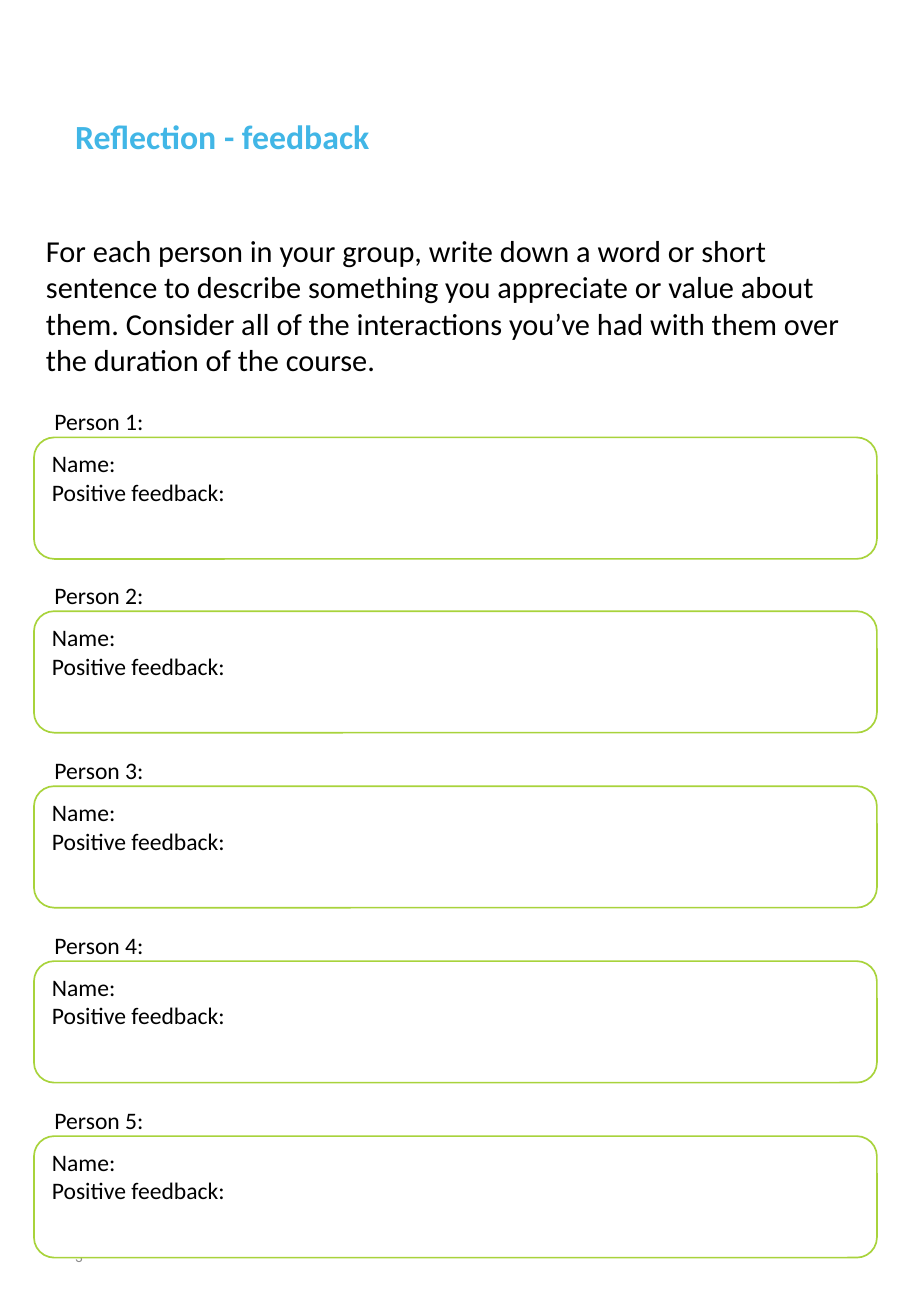
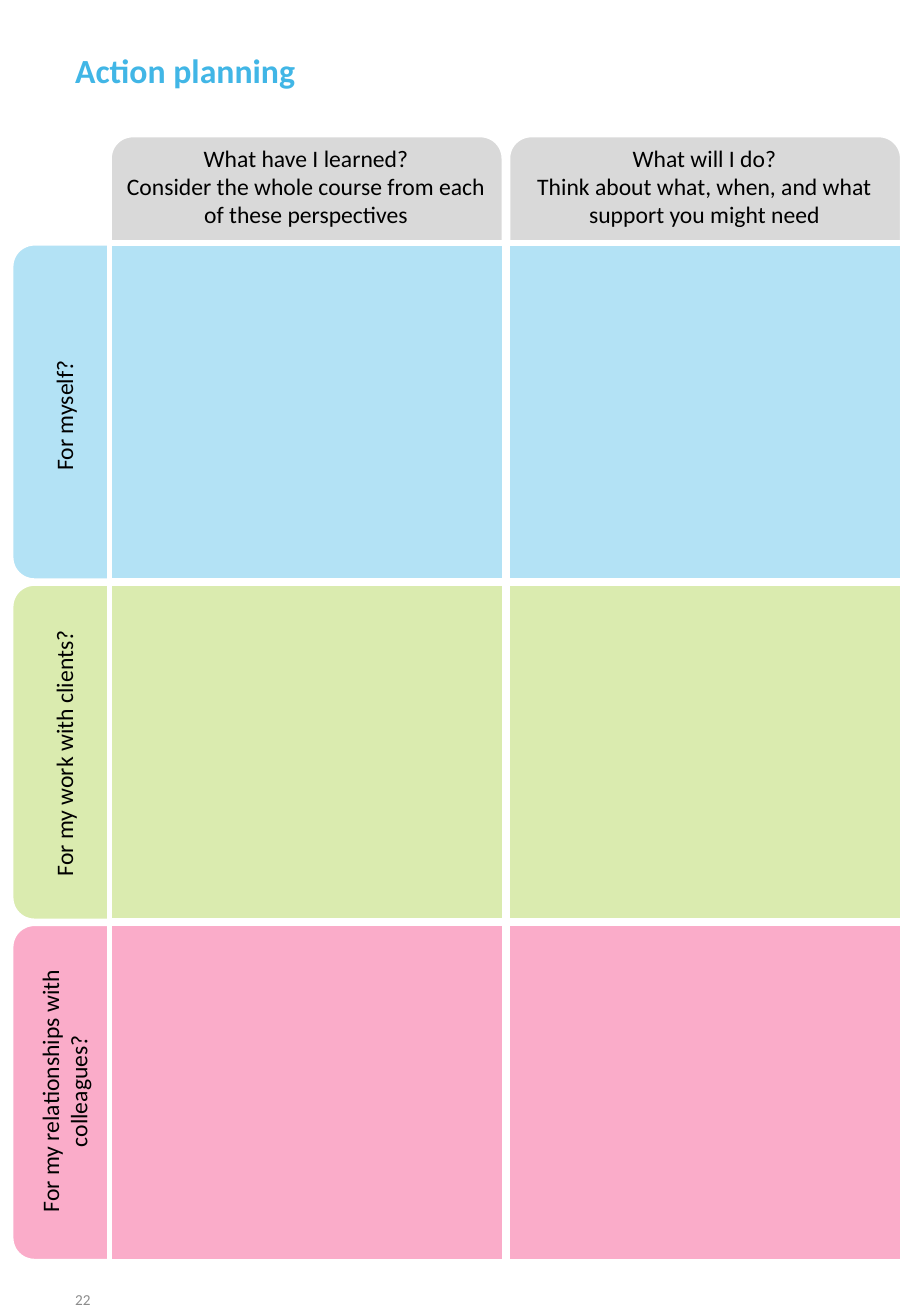
from pptx import Presentation
from pptx.dml.color import RGBColor
from pptx.enum.shapes import MSO_SHAPE as Shape
from pptx.enum.text import MSO_ANCHOR as Anchor, MSO_AUTO_SIZE as AutoSize, PP_ALIGN as Align
from pptx.util import Pt

PX = 9144
BLACK = RGBColor(0x00, 0x00, 0x00)
WHITE = RGBColor(0xFF, 0xFF, 0xFF)
TITLE_BLUE = RGBColor(0x41, 0xB6, 0xE6)
NUMBER_GREY = RGBColor(0x8C, 0x8C, 0x8C)
HEADER_GREY = RGBColor(0xD9, 0xD9, 0xD9)
GREEN_LINE = RGBColor(0xA8, 0xD3, 0x3B)
PALE_BLUE = RGBColor(0xB3, 0xE2, 0xF5)
PALE_GREEN = RGBColor(0xDA, 0xEB, 0xAF)
PINK = RGBColor(0xFA, 0xAC, 0xC9)

TITLE = {"font": {"size": Pt(20), "bold": True}, "color": TITLE_BLUE,
         "para": {"line_spacing": 0.9}, "frame": {"vertical_anchor": Anchor.MIDDLE}}
NUMBER = {"font": {"size": Pt(9)}, "color": NUMBER_GREY,
          "frame": {"vertical_anchor": Anchor.MIDDLE}}
INTRO = {"font": {"size": Pt(18)}, "frame": {"auto_size": AutoSize.SHAPE_TO_FIT_TEXT}}
FIELD = {"font": {"size": Pt(14)}, "para": {"alignment": Align.LEFT},
         "frame": {"vertical_anchor": Anchor.TOP}}
PERSON = {"font": {"size": Pt(14)},
          "frame": {"word_wrap": False, "auto_size": AutoSize.SHAPE_TO_FIT_TEXT}}
HEADING = {"font": {"size": Pt(14)}, "para": {"alignment": Align.CENTER},
           "frame": {"vertical_anchor": Anchor.MIDDLE}}


def write(page, at, lines, style, box=None):
    box = box or page.shapes.add_textbox(*[length * PX for length in at])
    frame = box.text_frame
    frame.word_wrap = True
    for name, value in style["frame"].items():
        setattr(frame, name, value)
    frame.text = "\n".join(lines)
    for para in frame.paragraphs:
        for name, value in style.get("para", {}).items():
            setattr(para, name, value)
        for span in para.runs:
            span.font.name = "Calibri"
            span.font.color.rgb = style.get("color", BLACK)
            for name, value in style["font"].items():
                setattr(span.font, name, value)
    return box


def draw(page, kind, at, fill, line, weight):
    box = page.shapes.add_shape(kind, *[length * PX for length in at])
    box.shadow.inherit = False
    box.fill.solid()
    box.fill.fore_color.rgb = fill
    box.line.color.rgb = line
    box.line.width = Pt(weight)
    return box


deck = Presentation()
deck.slide_width = 750 * PX
deck.slide_height = 1083 * PX

pages = []
for title, title_top, number, number_top in [
    ("Reflection - feedback", 85, "3", 1005),
    ("Action planning", 31, "22", 1040),
]:
    page = deck.slides.add_slide(deck.slide_layouts[6])
    write(page, (52, title_top, 647, 58), [title], TITLE)
    write(page, (52, number_top, 169, 58), [number], NUMBER)
    pages.append(page)
feedback, planning = pages

write(feedback, (28, 186, 694, 131), [
    "For each person in your group, write down a word or short sentence to describe "
    "something you appreciate or value about them. Consider all of the interactions "
    "you’ve had with them over the duration of the course."], INTRO)
for index in range(5):
    top = 360 + index * 575 // 4
    at = (28, top, 694, 100)
    card = draw(feedback, Shape.ROUNDED_RECTANGLE, at, WHITE, GREEN_LINE, 1)
    write(feedback, at, ["Name:", "Positive feedback:"], FIELD, card)
    write(feedback, (35, top - 30, 94, 34), [f"Person {index + 1}:"], PERSON)

columns = [
    (90, ["What have I learned?", "Consider the whole course from each of these perspectives"]),
    (418, ["What will I do?", "Think about what, when, and what support you might need"]),
]
rows = [
    ("For myself?", PALE_BLUE),
    ("For my work with clients?", PALE_GREEN),
    ("For my relationships with colleagues?", PINK),
]
for left, lines in columns:
    draw(planning, Shape.ROUNDED_RECTANGLE, (left, 111, 325, 116), HEADER_GREY, WHITE, 3)
for index, (label, color) in enumerate(rows):
    top = 200 + 280 * index
    tab = draw(planning, Shape.ROUNDED_RECTANGLE, (-72, top + 81, 278, 116), color, WHITE, 3)
    tab.rotation = 270
    for left, lines in columns:
        draw(planning, Shape.RECTANGLE, (left, top, 325, 278), color, WHITE, 3)
    caption = write(planning, (-84, 298 + 278 * index, 273, 88), [label], HEADING)
    caption.rotation = 270
for left, lines in columns:
    write(planning, (left, 114, 324, 78), lines, HEADING)

deck.save("out.pptx")
